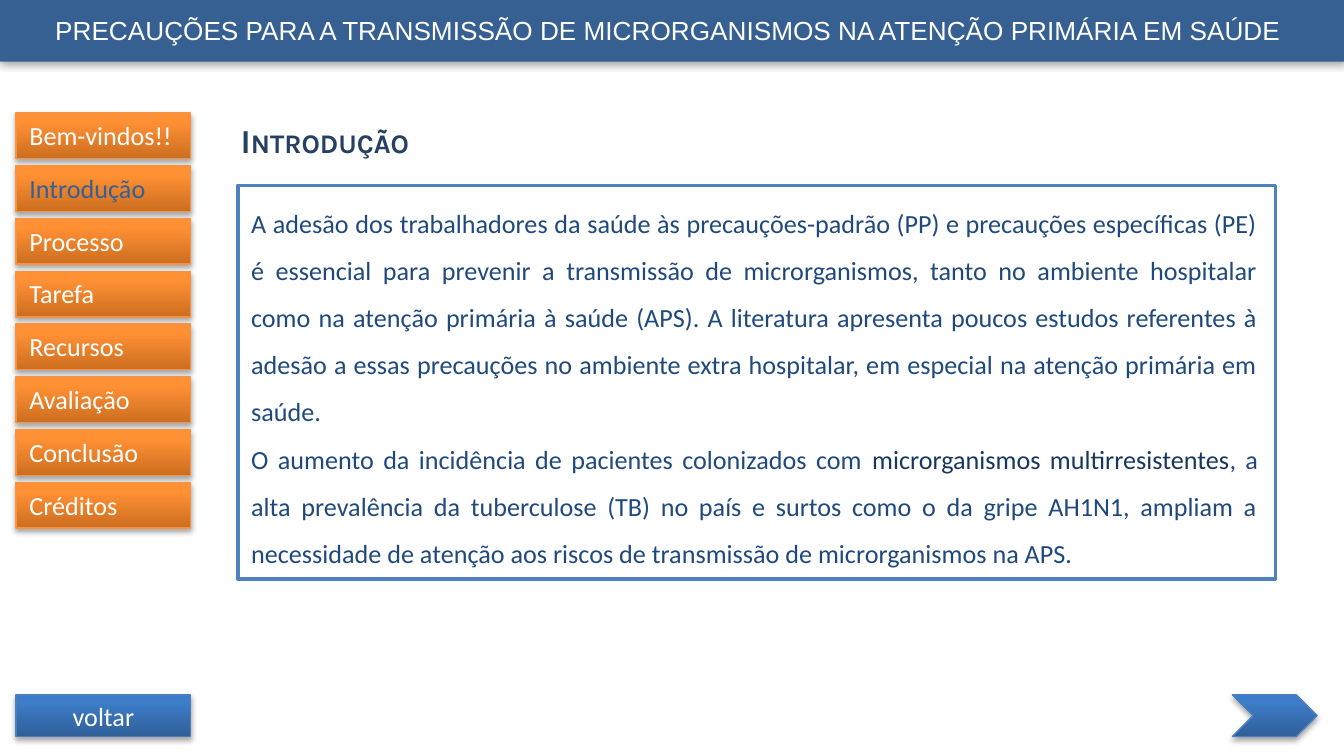
"""Build the introduction slide of a course on precautions in primary health care."""
from copy import deepcopy

from lxml.etree import SubElement
from pptx import Presentation
from pptx.dml.color import RGBColor
from pptx.enum.lang import MSO_LANGUAGE_ID as Language
from pptx.enum.shapes import MSO_SHAPE as Shape
from pptx.enum.text import MSO_ANCHOR as Anchor, MSO_AUTO_SIZE as AutoSize, PP_ALIGN as Align
from pptx.oxml.ns import qn
from pptx.util import Inches, Pt

BANNER = "PRECAUÇÕES PARA A TRANSMISSÃO DE MICRORGANISMOS NA ATENÇÃO PRIMÁRIA EM SAÚDE "
HEADING = "Introdução"
MENU = ["Bem-vindos!!", "Introdução", "Processo", "Tarefa",
        "Recursos", "Avaliação", "Conclusão", "Créditos"]
BACK = "voltar"
BODY = [
    [("A adesão dos trabalhadores da saúde às precauções-padrão (PP) e precauções "
      "específicas (PE) é essencial para prevenir a transmissão de microrganismos, tanto "
      "no ambiente hospitalar como na atenção primária à saúde (APS). A literatura "
      "apresenta poucos estudos referentes à adesão a essas precauções no ambiente extra "
      "hospitalar, em especial na atenção primária em saúde.", "body")],
    [("O aumento da incidência de pacientes colonizados com ", "body"),
     ("microrganismos multirresistentes", "emphasis"),
     (", a alta prevalência da tuberculose (TB) no país e surtos como o da gripe AH1N1, "
      "ampliam a necessidade de atenção aos riscos de transmissão de microrganismos na "
      "APS.", "body")],
]

THEME = {
    "banner": "376092", "heading": "254061", "body": "1F497D", "emphasis": "17375E",
    "white": "FFFFFF", "frame": "4F81BD", "current": "376092", "shadow": "000000",
    "orange": {"stops": [(0, "CC6E20"), (0.8, "FF9034"), (1, "FF9136")], "line": "F69240"},
    "blue": {"stops": [(0, "2F5F99"), (0.8, "3D7CC7"), (1, "3A7CCB")], "line": "4B7EBC"},
    "text_size": 14, "heading_size": 18,
    "text_font": "Calibri", "banner_font": "Arial", "heading_font": "Karla",
}

SLIDE_WIDTH = 10
SLIDE_HEIGHT = SLIDE_WIDTH * 9 / 16
MENU_LEFT, MENU_TOP, MENU_LAST = 0.12, 0.84, 3.59
MENU_STEP = (MENU_LAST - MENU_TOP) / (len(MENU) - 1)
BUTTON_WIDTH, BUTTON_HEIGHT = 1.3, 0.34
NAV_TOP, NAV_HEIGHT = 5.17, 0.31


def color(name):
    return RGBColor.from_string(THEME.get(name, name))


def add_run(paragraph, text, ink, font="text_font", size="text_size"):
    run = paragraph.add_run()
    run.text = text
    run.font.name = THEME[font]
    run.font.size = Pt(THEME[size])
    run.font.color.rgb = color(ink)
    run.font.language_id = Language.BRAZILIAN_PORTUGUESE
    return run


def add_block(slide, kind, left, top, width, height):
    block = slide.shapes.add_shape(
        kind, Inches(left), Inches(top), Inches(width), Inches(height))
    block.shadow.inherit = False
    block.text_frame.word_wrap = True
    return block


def fill_solid(block, ink):
    block.fill.solid()
    block.fill.fore_color.rgb = color(ink)


def set_line(block, ink, width):
    block.line.color.rgb = color(ink)
    block.line.width = Pt(width)


def cast_shadow(block, opacity, blur, distance, angle):
    effects = block._element.spPr.find(qn("a:effectLst"))
    shadow = SubElement(effects, qn("a:outerShdw"), blurRad=str(Pt(blur)),
                        dist=str(Pt(distance)), dir=str(angle * 60000), rotWithShape="0")
    tint = SubElement(shadow, qn("a:srgbClr"), val=THEME["shadow"])
    SubElement(tint, qn("a:alpha"), val=str(opacity * 1000))


def add_button(slide, kind, left, top, width, height, scheme):
    button = add_block(slide, kind, left, top, width, height)
    button.fill.gradient()
    button.fill.gradient_angle = 90
    stop_list = button._element.spPr.find(".//" + qn("a:gsLst"))
    stop_list.append(deepcopy(stop_list[-1]))
    for stop, (position, ink) in zip(button.fill.gradient_stops, THEME[scheme]["stops"]):
        stop.position = position
        stop.color.rgb = color(ink)
    set_line(button, THEME[scheme]["line"], 0.75)
    cast_shadow(button, 35, 3.1, 1.8, 90)
    return button


def add_banner(slide):
    banner = add_block(slide, Shape.RECTANGLE, 0, -0.02, SLIDE_WIDTH, 0.48)
    fill_solid(banner, "banner")
    banner.line.fill.background()
    cast_shadow(banner, 40, 5, 0, 0)
    frame = banner.text_frame
    frame.margin_left = frame.margin_right = Inches(0.1)
    frame.margin_top = frame.margin_bottom = Inches(0.1)
    frame.paragraphs[0].alignment = Align.CENTER
    add_run(frame.paragraphs[0], BANNER, "white", font="banner_font")


def add_heading(slide):
    heading = slide.shapes.title
    heading.left, heading.top = Inches(1.69), Inches(0.84)
    heading.width, heading.height = Inches(7.87), Inches(0.4)
    frame = heading.text_frame
    frame.vertical_anchor = Anchor.TOP
    frame.auto_size = AutoSize.SHAPE_TO_FIT_TEXT
    frame.paragraphs[0].alignment = Align.JUSTIFY
    run = add_run(frame.paragraphs[0], HEADING, "heading", "heading_font", "heading_size")
    run.font.bold = True
    run.font._element.set("cap", "small")


def add_body(slide):
    box = add_block(slide, Shape.RECTANGLE, 1.77, 1.38, 7.72, 2.93)
    fill_solid(box, "white")
    set_line(box, "frame", 2)
    frame = box.text_frame
    frame.vertical_anchor = Anchor.TOP
    frame.auto_size = AutoSize.SHAPE_TO_FIT_TEXT
    frame.margin_right = Inches(0.13)
    for index, runs in enumerate(BODY):
        paragraph = frame.add_paragraph() if index else frame.paragraphs[0]
        paragraph.alignment = Align.JUSTIFY
        paragraph.line_spacing = 1.5
        for text, ink in runs:
            add_run(paragraph, text, ink)


def add_menu(slide):
    for index, label in enumerate(MENU):
        item = add_button(slide, Shape.RECTANGLE, MENU_LEFT, MENU_TOP + index * MENU_STEP,
                          BUTTON_WIDTH, BUTTON_HEIGHT, "orange")
        frame = item.text_frame
        frame.vertical_anchor = Anchor.TOP
        frame.auto_size = AutoSize.SHAPE_TO_FIT_TEXT
        frame.paragraphs[0].alignment = Align.LEFT
        add_run(frame.paragraphs[0], label, "current" if label == HEADING else "white")


def add_navigation(slide):
    back = add_button(slide, Shape.RECTANGLE, MENU_LEFT, NAV_TOP,
                      BUTTON_WIDTH, NAV_HEIGHT, "blue")
    back.text_frame.paragraphs[0].alignment = Align.CENTER
    add_run(back.text_frame.paragraphs[0], BACK, "white")
    add_button(slide, Shape.CHEVRON, 9.17, NAV_TOP, 0.63, NAV_HEIGHT, "blue")


def main():
    deck = Presentation()
    deck.slide_width, deck.slide_height = Inches(SLIDE_WIDTH), Inches(SLIDE_HEIGHT)
    slide = deck.slides.add_slide(deck.slide_layouts[5])
    add_banner(slide)
    add_heading(slide)
    add_body(slide)
    add_menu(slide)
    add_navigation(slide)
    deck.save("out.pptx")


if __name__ == "__main__":
    main()
